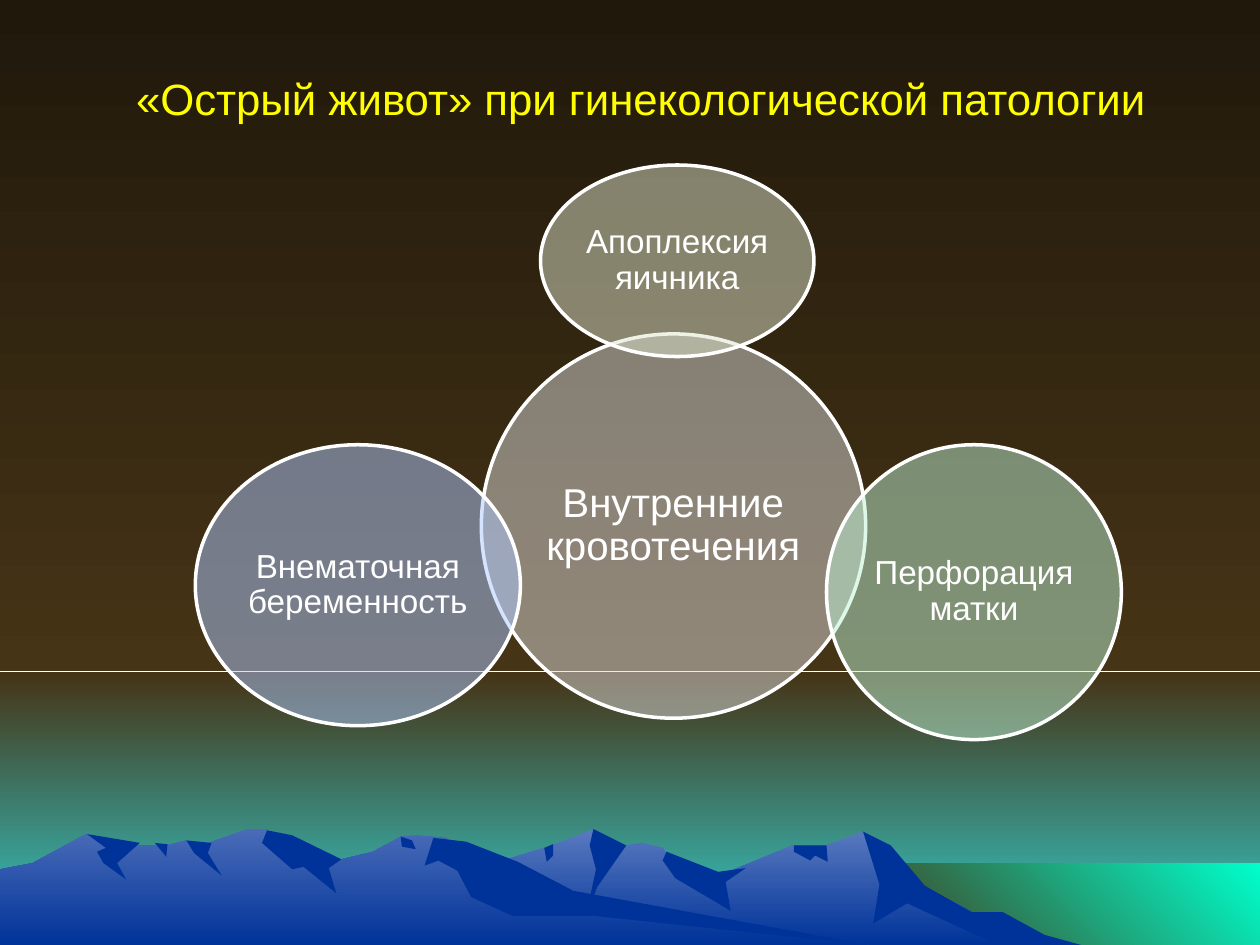
"""Builds the slide on acute abdomen in gynaecology over a mountain landscape."""
from lxml.etree import SubElement
from pptx import Presentation
from pptx.dml.color import RGBColor
from pptx.enum.shapes import MSO_SHAPE
from pptx.enum.text import MSO_ANCHOR, MSO_AUTO_SIZE, PP_ALIGN
from pptx.oxml.ns import qn
from pptx.util import Pt

PX = 9144
COLORS = {
    "night": "20180B", "earth": "463416", "sea": "33CCCC", "glow": "00FFCC",
    "ridge": "003399", "far_peak": "5A7ABF", "near_peak": "4A6CB8",
    "title": "FFFF00", "white": "FFFFFF", "gray": "DADADA",
    "olive": "DFE5CC", "green": "BDF2D5", "blue": "ADC9FF",
}


def paint(shape, colors, angle=270):
    shape.shadow.inherit = False
    shape.line.fill.background()
    if len(colors) == 1:
        shape.fill.solid()
        shape.fill.fore_color.rgb = RGBColor.from_string(COLORS[colors[0]])
        return
    shape.fill.gradient()
    shape.fill.gradient_angle = angle
    for stop, color, position in zip(shape.fill.gradient_stops, colors, (0, 1)):
        stop.color.rgb = RGBColor.from_string(COLORS[color])
        stop.position = position


def write(shape, text, size, color, frame_format, paragraph_format):
    frame = shape.text_frame
    frame.text = text
    for name, value in frame_format.items():
        setattr(frame, name, value)
    paragraph = frame.paragraphs[0]
    for name, value in paragraph_format.items():
        setattr(paragraph, name, value)
    for name, value in {"name": "Arial", "size": Pt(size), "bold": False}.items():
        setattr(paragraph.font, name, value)
    paragraph.font.color.rgb = RGBColor.from_string(COLORS[color])


presentation = Presentation()
presentation.slide_width = 1000 * PX
presentation.slide_height = 750 * PX
slide = presentation.slides.add_slide(presentation.slide_layouts[5])
shapes = slide.shapes

bands = [
    ((0, 533, 1000, 217), ("earth", "sea"), 270),
    ((0, 0, 1000, 533), ("night", "earth"), 270),
    ((683, 685, 317, 65), ("earth", "glow"), 45),
]
for box, colors, angle in bands:
    band = shapes.add_shape(MSO_SHAPE.RECTANGLE, *(length * PX for length in box))
    paint(band, colors, angle)

mountains = [
    (("far_peak", "ridge"), [
        (820, 750), (723, 698), (685, 660), (656, 671), (629, 671), (566, 697),
        (536, 690), (526, 673), (509, 669), (486, 673), (471, 658), (438, 671),
        (399, 683), (327, 709), (258, 750)]),
    (("ridge",), [
        (796, 724), (771, 724), (734, 703), (707, 671), (685, 660), (698, 702),
        (693, 733), (720, 717), (792, 750), (858, 750), (829, 742)]),
    (("ridge",), [
        (471, 658), (468, 671), (473, 690), (465, 727), (474, 704), (497, 671)]),
    (("ridge",), [
        (529, 676), (526, 683), (536, 697), (580, 723), (576, 700), (592, 689),
        (570, 692)]),
    (("ridge",), [
        (630, 671), (630, 676), (643, 683), (647, 679), (657, 684), (656, 671)]),
    (("ridge",), [(432, 673), (439, 670), (439, 679), (434, 684)]),
    (("near_peak", "ridge"), [
        (690, 750), (432, 712), (354, 665), (331, 663), (318, 664), (296, 676),
        (271, 682), (236, 681), (212, 658), (196, 658), (160, 671), (148, 667),
        (132, 671), (94, 671), (68, 662), (26, 685), (0, 690), (0, 750)]),
    (("ridge",), [
        (212, 659), (208, 669), (232, 690), (241, 688), (267, 709), (261, 689),
        (271, 682), (232, 663)]),
    (("ridge",), [
        (370, 668), (344, 665), (337, 687), (348, 683), (363, 691), (374, 712),
        (407, 727), (472, 727), (690, 750), (455, 707), (411, 684)]),
    (("ridge",), [(318, 664), (327, 667), (330, 674), (319, 672)]),
    (("ridge",), [(148, 667), (168, 669), (165, 677), (176, 695), (154, 677)]),
    (("ridge",), [(133, 670), (132, 680), (123, 669)]),
    (("ridge",), [
        (111, 669), (93, 685), (100, 698), (82, 685), (77, 676), (84, 673),
        (69, 662)]),
]
for colors, points in mountains:
    builder = shapes.build_freeform(*points[0], scale=PX)
    builder.add_line_segments(points[1:], close=True)
    paint(builder.convert_to_shape(), colors)

title = shapes.title
shapes._spTree.append(title._element)
for name, value in {"left": 98, "top": 52, "width": 850, "height": 52}.items():
    setattr(title, name, value * PX)
write(title, "«Острый живот» при гинекологической патологии", 25, "title",
      {"word_wrap": True, "vertical_anchor": MSO_ANCHOR.TOP,
       "auto_size": MSO_AUTO_SIZE.NONE},
      {"alignment": PP_ALIGN.LEFT})

circle_frame = {"word_wrap": True, "vertical_anchor": MSO_ANCHOR.MIDDLE}
for side in ("left", "top", "right", "bottom"):
    circle_frame[f"margin_{side}"] = 3 * PX
circles = [
    ("Внутренние кровотечения", (382, 265, 305, 305), "gray", 23),
    ("Апоплексия яичника", (429, 131, 217, 152), "olive", 19),
    ("Перфорация матки", (656, 353, 234, 234), "green", 19),
    ("Внематочная беременность", (155, 353, 258, 223), "blue", 19),
]
for text, box, color, size in circles:
    circle = shapes.add_shape(MSO_SHAPE.OVAL, *(length * PX for length in box))
    paint(circle, (color,))
    fill_color = circle._element.spPr.find(qn("a:solidFill"))[0]
    SubElement(fill_color, qn("a:alpha"), val="50000")
    circle.line.color.rgb = RGBColor.from_string(COLORS["white"])
    circle.line.width = Pt(2)
    write(circle, text, size, "white", circle_frame,
          {"alignment": PP_ALIGN.CENTER, "line_spacing": 0.9})

presentation.save("out.pptx")
